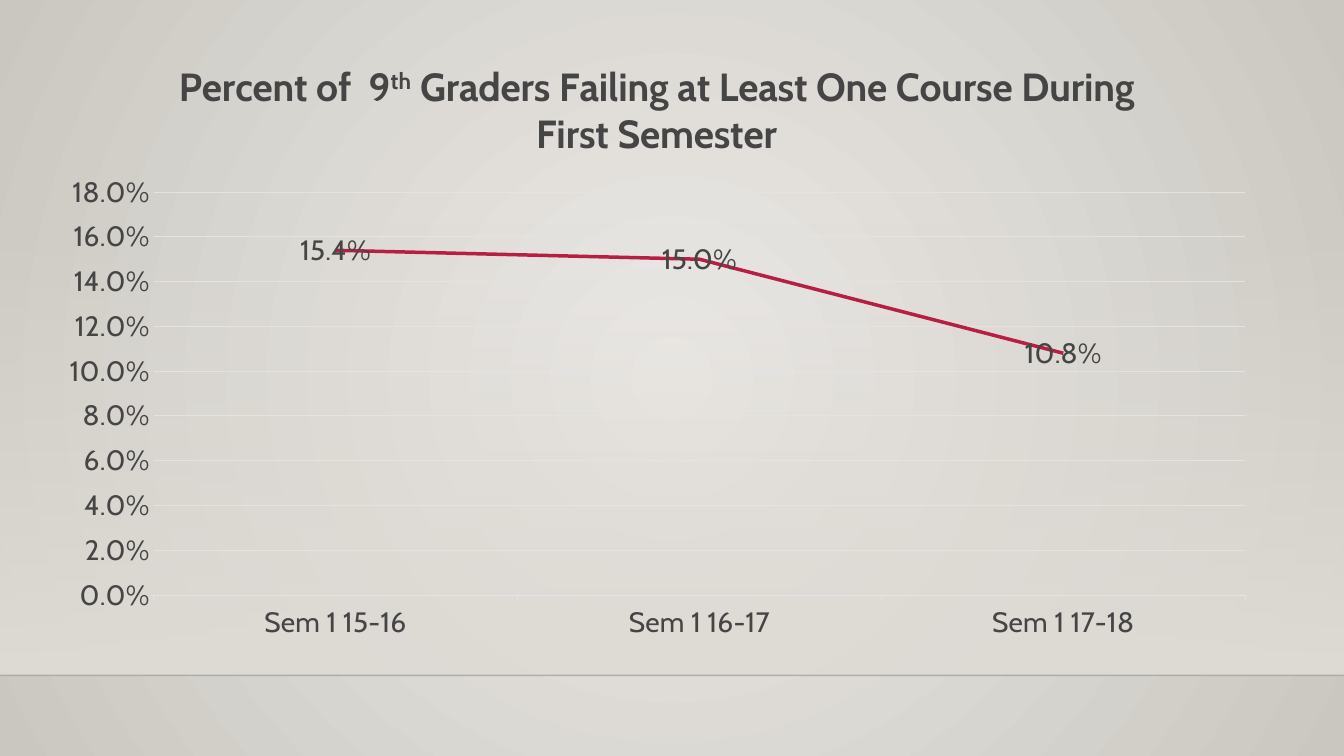
"""Build a slide with a line chart of ninth graders failing a course."""
from lxml.etree import SubElement
from pptx import Presentation
from pptx.chart.data import CategoryChartData
from pptx.dml.color import RGBColor
from pptx.enum.chart import XL_CHART_TYPE, XL_LABEL_POSITION, XL_MARKER_STYLE, XL_TICK_MARK
from pptx.enum.shapes import MSO_CONNECTOR, MSO_SHAPE
from pptx.oxml import parse_xml
from pptx.oxml.ns import nsdecls, qn
from pptx.util import Cm, Pt


def color(code):
    return RGBColor.from_string(code)


def style_font(font, size):
    font.name = "Cabin"
    font.size = Pt(size)
    font.color.rgb = color("454545")


deck = Presentation()
deck.slide_width, deck.slide_height = Cm(33.87), Cm(19.05)
page = deck.slides.add_slide(deck.slide_layouts[6])

wall = page.background.fill
wall.gradient()
for stop, code in zip(wall.gradient_stops, ("ECEAE7", "CAC7C1")):
    stop.color.rgb = color(code)
for stop, position in zip(wall.gradient_stops, (0, 1)):
    stop.position = position
wall_gradient = page.element.find(".//" + qn("a:gradFill"))
wall_gradient.replace(wall_gradient.find(qn("a:lin")), parse_xml(
    f'<a:path {nsdecls("a")} path="circle">'
    '<a:fillToRect l="50000" t="50000" r="50000" b="50000"/></a:path>'))

haze = page.shapes.add_shape(MSO_SHAPE.RECTANGLE, 0, Cm(5.61), deck.slide_width, Cm(11.41))
haze.shadow.inherit = False
haze.line.fill.background()
haze.fill.gradient()
haze.fill.gradient_angle = 270
for stop, position in zip(haze.fill.gradient_stops, (0, 1)):
    stop.color.rgb = color("DFDBD5")
    stop.position = position
SubElement(haze.element.find(".//" + qn("a:srgbClr")), qn("a:alpha")).set("val", "0")

floor = page.shapes.add_connector(
    MSO_CONNECTOR.STRAIGHT, 0, Cm(17.02), deck.slide_width, Cm(17.02))
floor.line.color.rgb = color("000001")
floor.line.width = Pt(1)
SubElement(floor.element.find(".//" + qn("a:srgbClr")), qn("a:alpha")).set("val", "20000")
SubElement(floor.element.spPr, qn("a:effectLst"))

data = CategoryChartData(number_format="0.0%")
data.categories = ["Sem 1 15-16", "Sem 1 16-17", "Sem 1 17-18"]
data.add_series("Series 1", (0.154, 0.15, 0.108))
chart = page.shapes.add_chart(
    XL_CHART_TYPE.LINE_STACKED, Cm(1.09), Cm(1.04), Cm(30.91), Cm(15.39), data).chart
chart.has_legend = False
style_font(chart.font, 20)

chart.has_title = True
chart.chart_title.include_in_layout = False
heading = chart.chart_title.text_frame.paragraphs[0]
for text, baseline in (("Percent of  9", 0), ("th", 30000),
                       (" Graders Failing at Least One Course During First Semester", 0)):
    span = heading.add_run()
    span.text = text
    style_font(span.font, 28)
    span.font.bold = True
    if baseline:
        span.font._element.set("baseline", str(baseline))

plot = chart.plots[0]
plot.vary_by_categories = False
plot_area = chart.element.find(".//" + qn("c:plotArea"))
for old_layout in plot_area.findall(qn("c:layout")):
    plot_area.remove(old_layout)
plot_area.insert(0, parse_xml(
    f'<c:layout {nsdecls("c")}><c:manualLayout><c:layoutTarget val="inner"/>'
    '<c:xMode val="edge"/><c:yMode val="edge"/><c:x val="0.09"/><c:y val="0.247"/>'
    '<c:w val="0.89"/><c:h val="0.66"/></c:manualLayout></c:layout>'))

semesters, percents = chart.category_axis, chart.value_axis
percents.minimum_scale, percents.maximum_scale, percents.major_unit = 0, 0.18, 0.02
percents.has_major_gridlines = True
percents.major_tick_mark = XL_TICK_MARK.NONE
percents.format.line.fill.background()
percents.tick_labels.number_format = "0.0%"
percents.tick_labels.number_format_is_linked = False
semesters.major_tick_mark = XL_TICK_MARK.OUTSIDE
for rule in (semesters.format.line, percents.major_gridlines.format.line):
    rule.color.rgb = color("E3E3E3")
    rule.width = Pt(0.75)
for axis in (semesters, percents):
    style_font(axis.tick_labels.font, 20)

failing = plot.series[0]
failing.smooth = False
failing.marker.style = XL_MARKER_STYLE.NONE
failing.format.line.color.rgb = color("B71E42")
failing.format.line.width = Pt(2.5)
labels = failing.data_labels
labels.show_value = True
labels.position = XL_LABEL_POSITION.CENTER
labels.number_format = "0.0%"
labels.number_format_is_linked = False
style_font(labels.font, 20)

deck.save("out.pptx")
